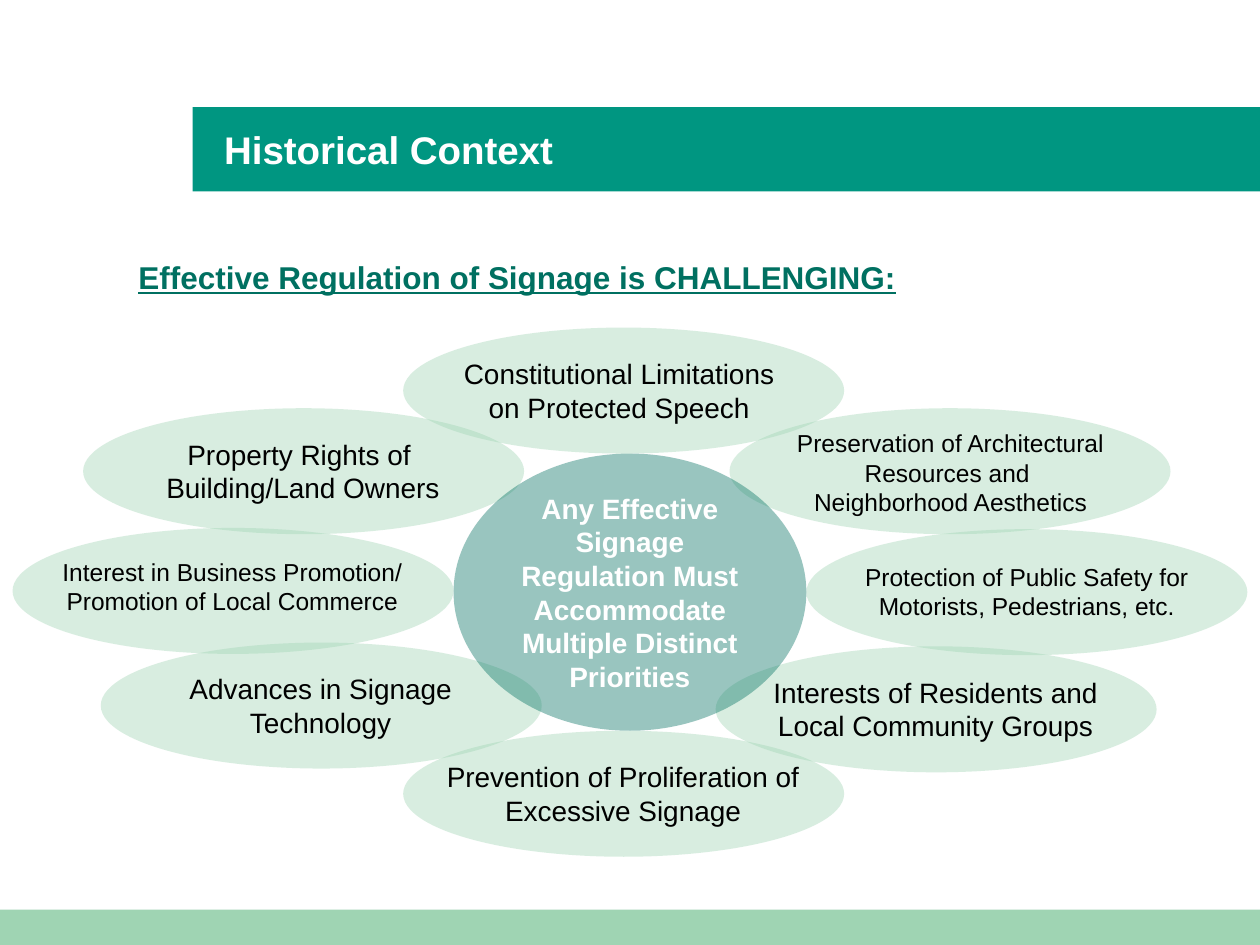
from dataclasses import dataclass
from lxml import etree
from pptx import Presentation
from pptx.dml.color import RGBColor
from pptx.enum.shapes import MSO_SHAPE
from pptx.enum.text import MSO_ANCHOR, PP_ALIGN
from pptx.oxml.ns import qn
from pptx.util import Inches, Pt

RECT, OVAL = MSO_SHAPE.RECTANGLE, MSO_SHAPE.OVAL
TOP, MIDDLE = MSO_ANCHOR.TOP, MSO_ANCHOR.MIDDLE
LEFT, CENTER = PP_ALIGN.LEFT, PP_ALIGN.CENTER


@dataclass(frozen=True)
class Theme:
    font: str = "Arial"
    band: str = "009681"
    mint: str = "9FD4B3"
    deep: str = "007061"
    white: str = "FFFFFF"
    black: str = "000000"
    title: int = 22
    head: int = 18
    body: int = 16
    small: int = 14
    alpha: int = 40


THEME = Theme()

TOPICS = [
    (3.2, 5.8, THEME.body, (0.31, 0.23, 2.87, 0.54),
     ["Prevention of Proliferation of Excessive Signage"]),
    (0.66, 3.24, THEME.body, (0.31, 0.23, 2.87, 0.54),
     ["Property Rights of ", "Building/Land Owners"]),
    (0.1, 4.19, THEME.small, (0.31, 0.23, 2.87, 0.47),
     ["Interest in Business Promotion/", "Promotion of Local Commerce"]),
    (0.8, 5.1, THEME.body, (0.31, 0.23, 2.87, 0.54),
     ["Advances in Signage Technology"]),
    (5.79, 3.24, THEME.small, (0.32, 0.16, 2.87, 0.71),
     ["Preservation of Architectural Resources and ", "Neighborhood Aesthetics"]),
    (6.4, 4.2, THEME.small, (0.24, 0.26, 3.02, 0.47),
     ["Protection of Public Safety for", "Motorists, Pedestrians, etc."]),
    (3.2, 2.6, THEME.body, (0.31, 0.23, 2.87, 0.54),
     ["Constitutional Limitations ", "on Protected Speech "]),
    (5.68, 5.13, THEME.body, (0.31, 0.23, 2.87, 0.54),
     ["Interests of Residents and Local Community Groups"]),
]


def add_shape(slide, kind, box, color, alpha=None):
    shape = slide.shapes.add_shape(kind, *map(Inches, box))
    shape.shadow.inherit = False
    shape.line.fill.background()
    shape.fill.solid()
    shape.fill.fore_color.rgb = RGBColor.from_string(color)
    if alpha is not None:
        tint = shape.fill._xPr.find(".//" + qn("a:srgbClr"))
        etree.SubElement(tint, qn("a:alpha"), val=str(alpha * 1000))
    return shape


def set_text(shape, lines, size, color, align=CENTER, anchor=TOP, **style):
    frame = shape.text_frame
    frame.word_wrap = True
    frame.vertical_anchor = anchor
    frame.text = "\n".join(lines)
    look = {"name": THEME.font, "size": Pt(size), **style}
    for para in frame.paragraphs:
        para.alignment = align
        for run in para.runs:
            for key, value in look.items():
                setattr(run.font, key, value)
            run.font.color.rgb = RGBColor.from_string(color)


def add_label(slide, box, lines, size, color, inset=True, **style):
    label = slide.shapes.add_textbox(*map(Inches, box))
    if not inset:
        for side in ("left", "top", "right", "bottom"):
            setattr(label.text_frame, "margin_" + side, 0)
    set_text(label, lines, size, color, **style)


def add_topic(slide, left, top, size, place, lines):
    add_shape(slide, OVAL, (left, top, 3.5, 1), THEME.mint, THEME.alpha)
    dx, dy, width, height = place
    add_label(slide, (left + dx, top + dy, width, height), lines, size,
              THEME.black, inset=False)


def main():
    deck = Presentation()
    deck.slide_width, deck.slide_height = Inches(10), Inches(7.5)
    slide = deck.slides.add_slide(deck.slide_layouts[6])

    add_shape(slide, RECT, (1.53, 0.85, 8.47, 0.67), THEME.band)
    add_shape(slide, RECT, (0, 7.22, 10, 0.28), THEME.mint)
    add_label(slide, (1.78, 0.85, 7.64, 0.67), ["Historical Context"],
              THEME.title, THEME.white, inset=False, align=LEFT,
              anchor=MIDDLE, bold=True)
    for topic in TOPICS:
        add_topic(slide, *topic)
    hub = add_shape(slide, OVAL, (3.6, 3.6, 2.8, 2.2), THEME.deep, THEME.alpha)
    set_text(hub, ["Any Effective Signage Regulation Must Accommodate "
                   "Multiple Distinct Priorities"],
             THEME.body, THEME.white, anchor=MIDDLE, bold=True)
    add_label(slide, (1, 2, 6.23, 0.4),
              ["Effective Regulation of Signage is CHALLENGING:"],
              THEME.head, THEME.deep, align=LEFT, bold=True, underline=True)
    deck.save("out.pptx")


if __name__ == "__main__":
    main()
